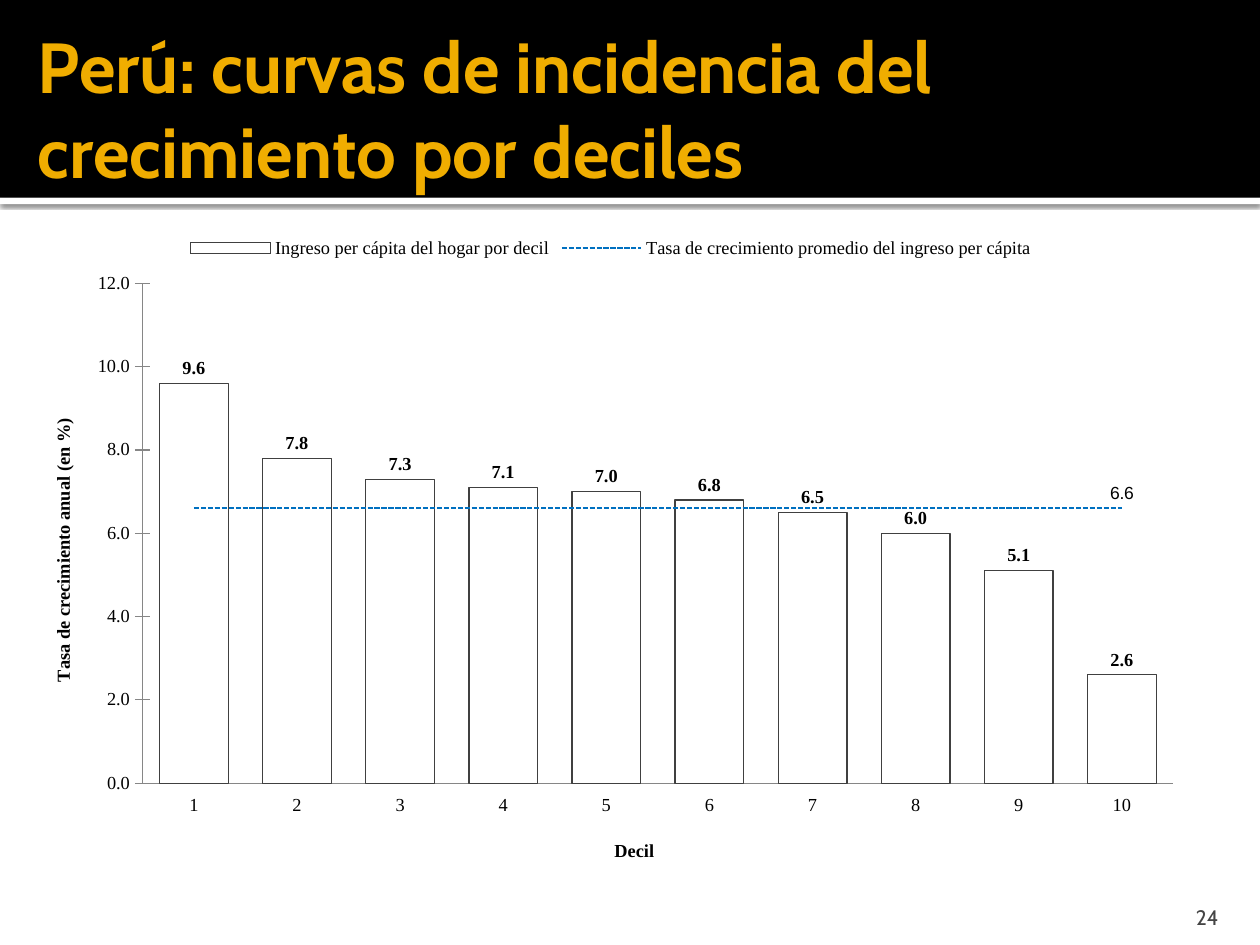
from lxml import etree
from pptx import Presentation
from pptx.chart.data import CategoryChartData
from pptx.dml.color import RGBColor
from pptx.enum.chart import (XL_CHART_TYPE, XL_LABEL_POSITION, XL_LEGEND_POSITION,
                             XL_MARKER_STYLE, XL_TICK_LABEL_POSITION, XL_TICK_MARK)
from pptx.enum.dml import MSO_LINE
from pptx.enum.shapes import MSO_SHAPE
from pptx.enum.text import MSO_ANCHOR, PP_ALIGN
from pptx.oxml import parse_xml
from pptx.oxml.ns import qn
from pptx.util import Inches, Pt

COLORS = {name: RGBColor.from_string(value) for name, value in {
    "white": "FFFFFF", "black": "000000", "gold": "F0AD00",
    "gray": "454545", "bar_line": "404040", "axis": "868686", "average": "0070C0",
}.items()}
NUMBER_FORMAT = "#,##0.0"
DRAWING = "http://schemas.openxmlformats.org/drawingml/2006/main"


def set_layout(parent, index, **fractions):
    """Give a chart part a manual place, in fractions of the chart area."""
    for old in parent.findall(qn("c:layout")):
        parent.remove(old)
    layout = etree.Element(qn("c:layout"))
    manual = etree.SubElement(layout, qn("c:manualLayout"))
    settings = {"xMode": "edge", "yMode": "edge", **fractions}
    if "w" in fractions:
        settings = {"layoutTarget": "inner", **settings}
    for name, value in settings.items():
        etree.SubElement(manual, qn("c:" + name)).set("val", str(value))
    parent.insert(index, layout)


deck = Presentation()
deck.slide_width, deck.slide_height = Inches(10), Inches(7.5)
page = deck.slides.add_slide(deck.slide_layouts[5])

# Header bands, behind the title
bands = [(1.57, 0.05, "white"), (0, 1.57, "black")]
for position, (top, height, color) in enumerate(bands):
    band = page.shapes.add_shape(MSO_SHAPE.RECTANGLE, 0, Inches(top),
                                 Inches(10), Inches(height))
    band.fill.solid()
    band.fill.fore_color.rgb = COLORS[color]
    band.line.fill.background()
    band.shadow.inherit = False
    if color == "white":
        effects = band._element.spPr.find(qn("a:effectLst"))
        effects.append(parse_xml(
            f'<a:outerShdw xmlns:a="{DRAWING}" blurRad="{Pt(2.5)}" dist="{Pt(0.8)}" '
            'dir="5400000" algn="tl" rotWithShape="0"><a:srgbClr val="000000">'
            '<a:alpha val="60000"/></a:srgbClr></a:outerShdw>'))
    page.shapes._spTree.insert(2 + position, band._element)

# Title and page number
title = page.shapes.title
title.left, title.top = Inches(0.2), Inches(0.17)
title.width, title.height = Inches(9.8), Inches(1.37)
number = page.shapes.add_textbox(Inches(8.97), Inches(7.08), Inches(0.8), Inches(0.3))
texts = [
    (title, "Perú: curvas de incidencia del crecimiento por deciles", 40.5, "gold",
     True, PP_ALIGN.LEFT, MSO_ANCHOR.MIDDLE, 0.05, 0.05),
    (number, "24", 12, "gray", False, PP_ALIGN.RIGHT, MSO_ANCHOR.BOTTOM, 0.1, 0),
]
for box, text, size, color, bold, align, anchor, right, bottom in texts:
    frame = box.text_frame
    frame.text = text
    frame.word_wrap = True
    frame.vertical_anchor = anchor
    frame.margin_left, frame.margin_right = Inches(0.1), Inches(right)
    frame.margin_top, frame.margin_bottom = Inches(0.05), Inches(bottom)
    para = frame.paragraphs[0]
    para.alignment = align
    para.font.name, para.font.size, para.font.bold = "Cabin", Pt(size), bold
    para.font.color.rgb = COLORS[color]

# Chart: columns by decile and a line for the average
data = CategoryChartData(number_format=NUMBER_FORMAT)
data.categories = [str(decile) for decile in range(1, 11)]
data.add_series("Ingreso per cápita del hogar por decil",
                [9.6, 7.8, 7.3, 7.1, 7, 6.8, 6.5, 6, 5.1, 2.6])
data.add_series("Tasa de crecimiento promedio del ingreso per cápita", [6.6] * 10)
chart = page.shapes.add_chart(XL_CHART_TYPE.COLUMN_CLUSTERED, Inches(0.2), Inches(1.78),
                              Inches(9.3), Inches(5.22), data).chart
chart.font.name, chart.font.size = "Times New Roman", Pt(10.5)
chart.font.color.rgb = COLORS["black"]
chart.has_title = False
chart.has_legend = True
chart.legend.position = XL_LEGEND_POSITION.TOP
chart.legend.include_in_layout = False

# Move the average series to a line chart on the same axes
bar_chart = chart.plots[0]._element
average_series = bar_chart.findall(qn("c:ser"))[1]
for bar_setting in average_series.findall(qn("c:invertIfNegative")):
    average_series.remove(bar_setting)
line_chart = parse_xml(
    '<c:lineChart xmlns:c="http://schemas.openxmlformats.org/drawingml/2006/chart">'
    '<c:grouping val="standard"/><c:varyColors val="0"/><c:marker val="1"/></c:lineChart>')
line_chart.insert(2, average_series)
for axis_id in bar_chart.findall(qn("c:axId")):
    etree.SubElement(line_chart, qn("c:axId")).set("val", axis_id.get("val"))
bar_chart.addnext(line_chart)

columns, average_plot = chart.plots
columns.gap_width = 50
columns.vary_by_categories = False
income = columns.series[0]
income.invert_if_negative = False
income.format.fill.solid()
income.format.fill.fore_color.rgb = COLORS["white"]
income.format.line.color.rgb = COLORS["bar_line"]
income.format.line.width = Pt(0.75)
labels = income.data_labels
labels.show_value = True
labels.number_format, labels.number_format_is_linked = NUMBER_FORMAT, False
labels.position = XL_LABEL_POSITION.OUTSIDE_END
labels.font.bold = True

average = average_plot.series[0]
average.smooth = False
average.marker.style = XL_MARKER_STYLE.NONE
average.format.line.color.rgb = COLORS["average"]
average.format.line.width = Pt(1)
average.format.line.dash_style = MSO_LINE.SQUARE_DOT
last_label = average.points[9].data_label
last_label.font.name, last_label.font.size = "Arial", Pt(10)
last_label.position = XL_LABEL_POSITION.ABOVE

# Axes
decile_axis, growth_axis = chart.category_axis, chart.value_axis
axes = [
    (decile_axis, "Decil", XL_TICK_MARK.NONE, 0.5, 0.93),
    (growth_axis, "Tasa de crecimiento anual (en %)", XL_TICK_MARK.CROSS, 0.02, 0.29),
]
for axis, text, tick, x, y in axes:
    axis.has_major_gridlines = False
    axis.major_tick_mark, axis.minor_tick_mark = tick, XL_TICK_MARK.NONE
    axis.format.line.color.rgb = COLORS["axis"]
    axis.format.line.width = Pt(0.75)
    frame = axis.axis_title.text_frame
    frame.text = text
    font = frame.paragraphs[0].font
    font.name, font.size, font.bold = "Times New Roman", Pt(10.5), True
    font.color.rgb = COLORS["black"]
    set_layout(axis.axis_title._element, 1, x=x, y=y)
growth_axis.axis_title.text_frame._txBody.bodyPr.set("rot", "-5400000")
decile_axis.tick_label_position = XL_TICK_LABEL_POSITION.LOW
growth_axis.minimum_scale, growth_axis.maximum_scale, growth_axis.major_unit = 0, 12, 2
growth_axis.tick_labels.number_format = NUMBER_FORMAT
growth_axis.tick_labels.number_format_is_linked = False
set_layout(bar_chart.getparent(), 0, x=0.1, y=0.09, w=0.88, h=0.76)

deck.save("out.pptx")
